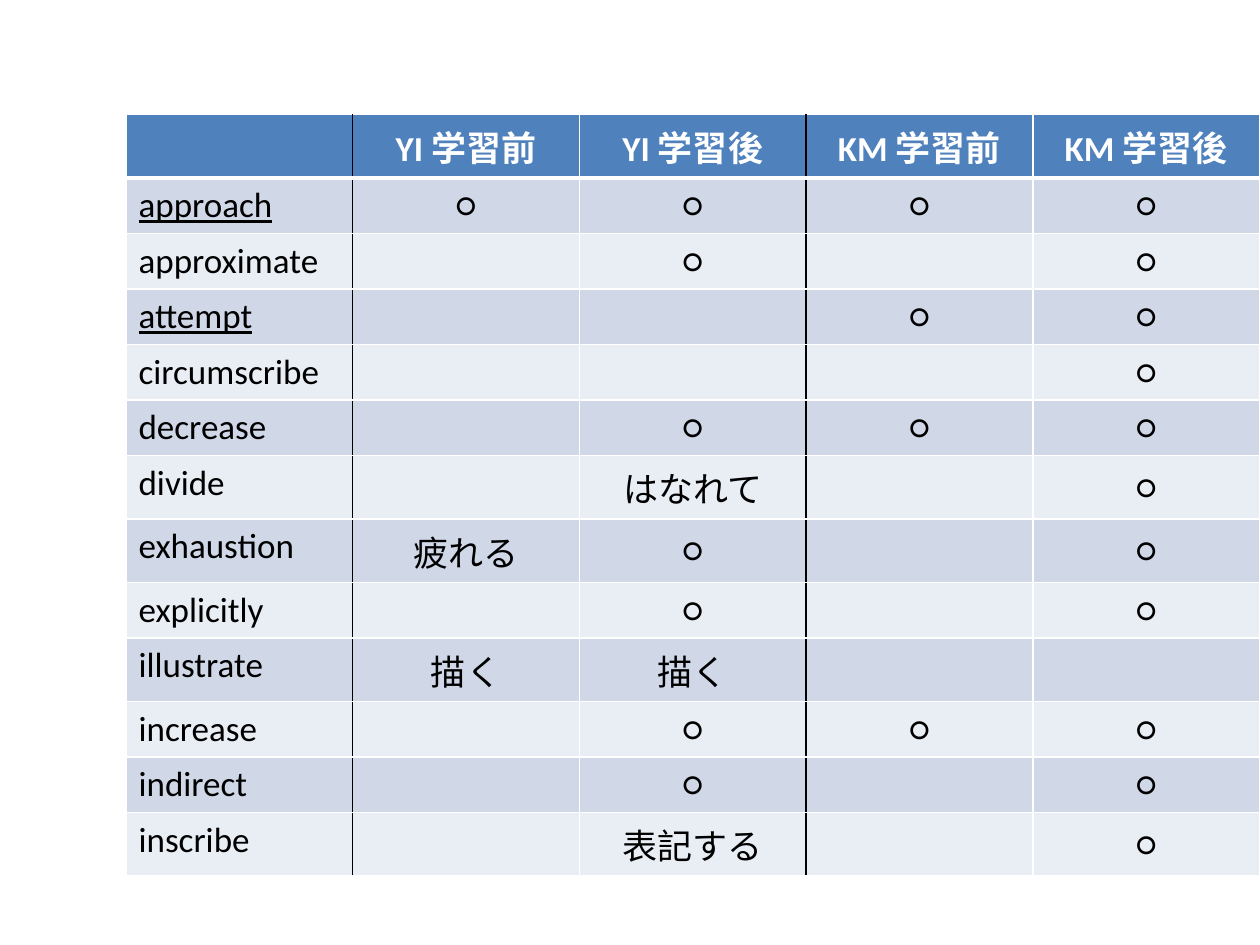
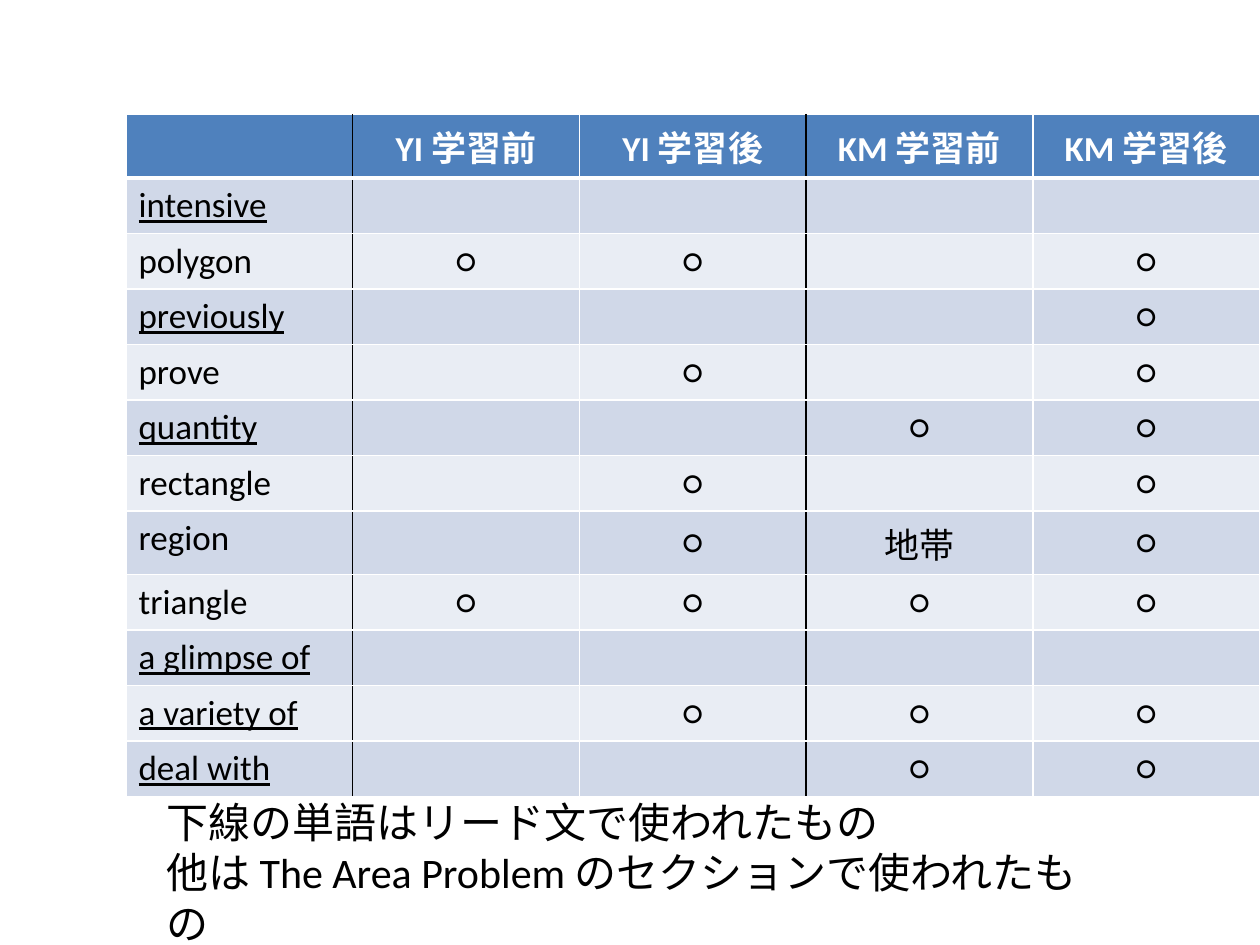
from lxml.etree import SubElement
from pptx import Presentation
from pptx.dml.color import RGBColor
from pptx.enum.text import MSO_ANCHOR as Anchor, MSO_AUTO_SIZE as AutoSize, PP_ALIGN as Align
from pptx.oxml.ns import qn
from pptx.util import Cm, Pt

WHITE = RGBColor(0xFF, 0xFF, 0xFF)
BLACK = RGBColor(0x00, 0x00, 0x00)
HEADER_BLUE = RGBColor(0x4F, 0x81, 0xBD)
BANDS = (RGBColor(0xD0, 0xD8, 0xE8), RGBColor(0xE9, 0xED, 0xF4))
FONT = "Calibri"

COLUMN_WIDTH = Cm(4.57)
ROW_HEIGHT = Cm(1.1)
BLACK_RULES = (1, 3)  # column boundaries drawn in black
HEADINGS = ("", "YI 学習前", "YI 学習後", "KM 学習前", "KM 学習後")
LEAD_WORDS = {"approach", "attempt", "intensive", "previously", "quantity",
              "a glimpse of", "a variety of", "deal with"}

WORDS_A_TO_I = (
    ("approach", "○", "○", "○", "○"),
    ("approximate", "", "○", "", "○"),
    ("attempt", "", "", "○", "○"),
    ("circumscribe", "", "", "", "○"),
    ("decrease", "", "○", "○", "○"),
    ("divide", "", "はなれて", "", "○"),
    ("exhaustion", "疲れる", "○", "", "○"),
    ("explicitly", "", "○", "", "○"),
    ("illustrate", "描く", "描く", "", ""),
    ("increase", "", "○", "○", "○"),
    ("indirect", "", "○", "", "○"),
    ("inscribe", "", "表記する", "", "○"),
)
WORDS_I_TO_T = (
    ("intensive", "", "", "", ""),
    ("polygon", "○", "○", "", "○"),
    ("previously", "", "", "", "○"),
    ("prove", "", "○", "", "○"),
    ("quantity", "", "", "○", "○"),
    ("rectangle", "", "○", "", "○"),
    ("region", "", "○", "地帯", "○"),
    ("triangle", "○", "○", "○", "○"),
    ("a glimpse of", "", "", "", ""),
    ("a variety of", "", "○", "○", "○"),
    ("deal with", "", "", "○", "○"),
)
NOTE = ("下線の単語はリード文で使われたもの",
        "他は The Area Problem のセクションで使われたもの")


def write(para, text, size=20, color=BLACK, bold=False, underline=False, align=Align.LEFT):
    para.alignment = align
    span = para.add_run()
    span.text = text
    font = span.font
    font.name, font.size = FONT, Pt(size)
    font.bold, font.underline = bold, underline
    font.color.rgb = color


def set_borders(cell, borders):
    """Give the cell its (side, colour, points) lines, in the order L, R, T, B."""
    properties = cell._tc.get_or_add_tcPr()
    for position, (side, color, points) in enumerate(borders):
        line = SubElement(properties, qn(f"a:ln{side}"), w=str(Pt(points)))
        fill = SubElement(line, qn("a:solidFill"))
        SubElement(fill, qn("a:srgbClr"), val=str(color))
        properties.insert(position, line)


def rule_color(boundary):
    return BLACK if boundary in BLACK_RULES else WHITE


def format_cell(cell, text, row, column):
    is_header = row == 0
    cell.fill.solid()
    cell.fill.fore_color.rgb = HEADER_BLUE if is_header else BANDS[(row - 1) % 2]
    set_borders(cell, (
        ("L", rule_color(column), 1),
        ("R", rule_color(column + 1), 1),
        ("T", WHITE, 3 if row == 1 else 1),
        ("B", WHITE, 3 if is_header else 1),
    ))
    if column:
        cell.vertical_anchor = Anchor.MIDDLE
    if text:
        write(cell.text_frame.paragraphs[0], text,
              color=WHITE if is_header else BLACK, bold=is_header,
              underline=text in LEAD_WORDS,
              align=Align.CENTER if column else Align.LEFT)


def add_word_table(page, words):
    rows = (HEADINGS, *words)
    frame = page.shapes.add_table(len(rows), len(HEADINGS), Cm(2.54), Cm(2.31),
                                  COLUMN_WIDTH * len(HEADINGS), ROW_HEIGHT * len(rows))
    table = frame.table
    table.first_row = table.horz_banding = False
    for column in table.columns:
        column.width = COLUMN_WIDTH
    for row, texts in enumerate(rows):
        table.rows[row].height = ROW_HEIGHT
        for column, text in enumerate(texts):
            format_cell(table.cell(row, column), text, row, column)


def add_note(page, lines):
    box = page.shapes.add_textbox(Cm(3.1), Cm(15.93), Cm(18.87), Cm(2.31))
    frame = box.text_frame
    frame.word_wrap = True
    frame.auto_size = AutoSize.SHAPE_TO_FIT_TEXT
    for index, line in enumerate(lines):
        para = frame.add_paragraph() if index else frame.paragraphs[0]
        write(para, line, size=24)


def main():
    deck = Presentation()
    deck.slide_width, deck.slide_height = Cm(25.4), Cm(19.05)
    blank = deck.slide_layouts[6]
    for words in (WORDS_A_TO_I, WORDS_I_TO_T):
        page = deck.slides.add_slide(blank)
        add_word_table(page, words)
    add_note(page, NOTE)
    deck.save("out.pptx")


if __name__ == "__main__":
    main()
